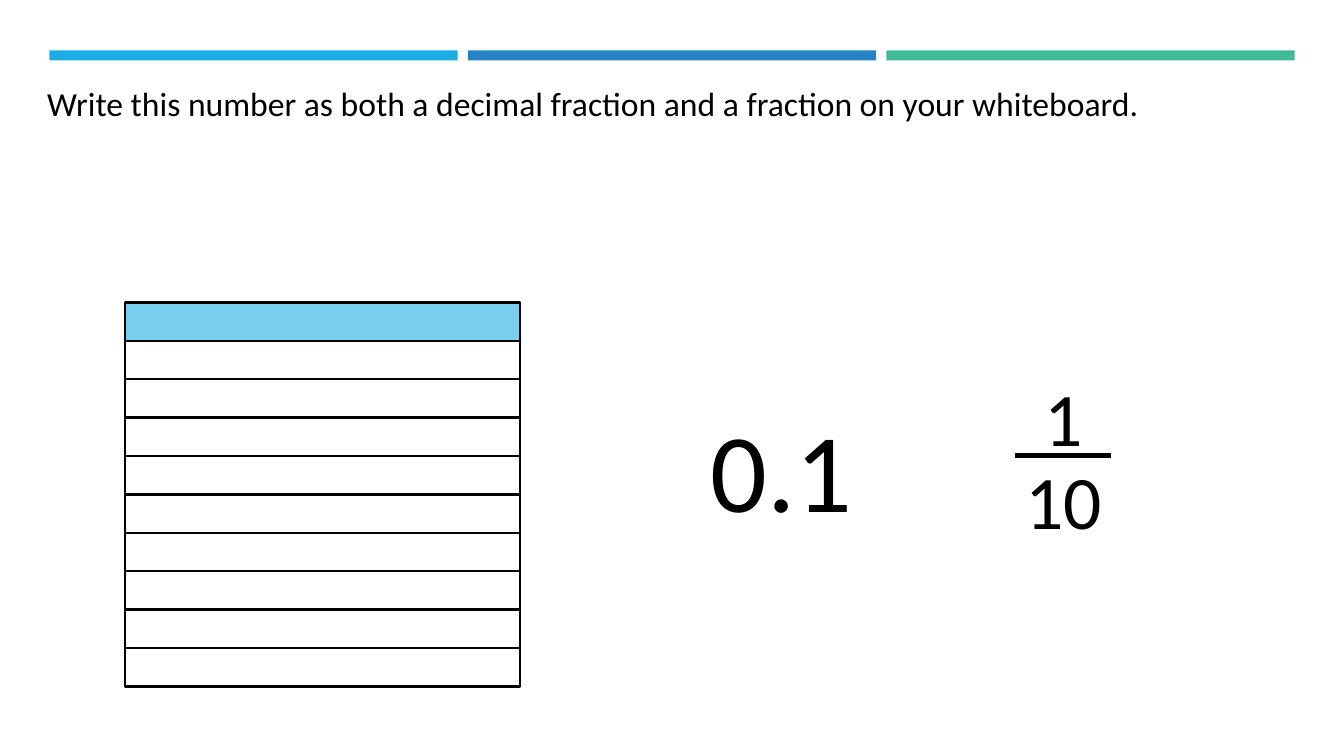
from dataclasses import dataclass

from pptx import Presentation
from pptx.dml.color import RGBColor
from pptx.enum.shapes import MSO_CONNECTOR as CONN, MSO_SHAPE as SHAPE
from pptx.enum.text import MSO_AUTO_SIZE as FIT
from pptx.oxml.ns import qn
from pptx.util import Emu, Pt
from lxml.etree import SubElement


@dataclass(frozen=True)
class Theme:
    """Colours, font, type sizes and line widths of the slide."""
    bars: tuple = ("1CADE4", "2683C6", "42BA97")
    shaded: str = "77CEEF"
    ink: str = "000000"
    font: str = "Calibri"
    title: int = 24
    fraction: int = 54
    decimal: int = 80
    cell_line: float = 1.75
    fraction_line: float = 3


T = Theme()
PX = 9144


def px(n):
    """Turn px, 100 to the inch, into EMU."""
    return Emu(round(n * PX))


def rgb(code):
    """Turn a hex code into a colour."""
    return RGBColor.from_string(code)


def add_rect(s, x, y, w, h, fill=None, line=None):
    """Draw a rectangle with an optional fill and outline."""
    sp = s.shapes.add_shape(SHAPE.RECTANGLE, px(x), px(y), px(w), px(h))
    sp.shadow.inherit = False
    if fill:
        sp.fill.solid()
        sp.fill.fore_color.rgb = rgb(fill)
    else:
        sp.fill.background()
    if line:
        sp.line.color.rgb = rgb(line)
        sp.line.width = Pt(T.cell_line)
    else:
        sp.line.fill.background()
    return sp


def add_text(s, text, x, y, w, h, size=T.title, color=T.ink, fit=FIT.NONE):
    """Place one line of text in a wrapping box."""
    tf = s.shapes.add_textbox(px(x), px(y), px(w), px(h)).text_frame
    tf.word_wrap = True
    tf.auto_size = fit
    r = tf.paragraphs[0].add_run()
    r.text = text
    r.font.name = T.font
    r.font.size = Pt(size)
    r.font.color.rgb = rgb(color)


def add_header(s, x, y, w, h, gap=10):
    """Split the box into equal coloured bars."""
    bar_w = (w - gap * (len(T.bars) - 1)) / len(T.bars)
    for i, color in enumerate(T.bars):
        add_rect(s, x + i * (bar_w + gap), y, bar_w, h, fill=color)


def add_tenths(s, x, y, w, h, parts=10, shaded=1):
    """Stack equal strips in the box and shade the first ones."""
    strip_h = h / parts
    for i in range(parts):
        fill = T.shaded if i < shaded else None
        add_rect(s, x, y + i * strip_h, w, strip_h, fill=fill, line=T.ink)


def add_fraction(s, top, bottom, x, y, w, h):
    """Set a numerator and denominator on either side of a bar."""
    text_w, text_h, bar_y = 120, 101, y + 89
    add_text(s, top, x + 19, y, text_w, text_h, size=T.fraction, fit=FIT.SHAPE_TO_FIT_TEXT)
    add_text(s, bottom, x, y + h - text_h, text_w, text_h, size=T.fraction,
             fit=FIT.SHAPE_TO_FIT_TEXT)
    line = s.shapes.add_connector(CONN.STRAIGHT, px(x), px(bar_y), px(x + w), px(bar_y))
    line.line.color.rgb = rgb(T.ink)
    line.line.width = Pt(T.fraction_line)
    SubElement(line._element.spPr, qn("a:effectLst"))


def main():
    """Build the slide and save it."""
    prs = Presentation()
    prs.slide_width, prs.slide_height = px(1333), px(750)
    s = prs.slides.add_slide(prs.slide_layouts[6])
    add_header(s, 49, 50, 1235, 10)
    add_tenths(s, 124, 300, 392, 381)
    add_text(s, "0.1", 695, 392, 218, 145, size=T.decimal, fit=FIT.SHAPE_TO_FIT_TEXT)
    add_fraction(s, "1", "10", 1007, 363, 95, 183)
    add_text(s, "Write this number as both a decimal fraction and a fraction on your whiteboard.",
             37, 77, 1206, 111)
    prs.save("out.pptx")


if __name__ == "__main__":
    main()
